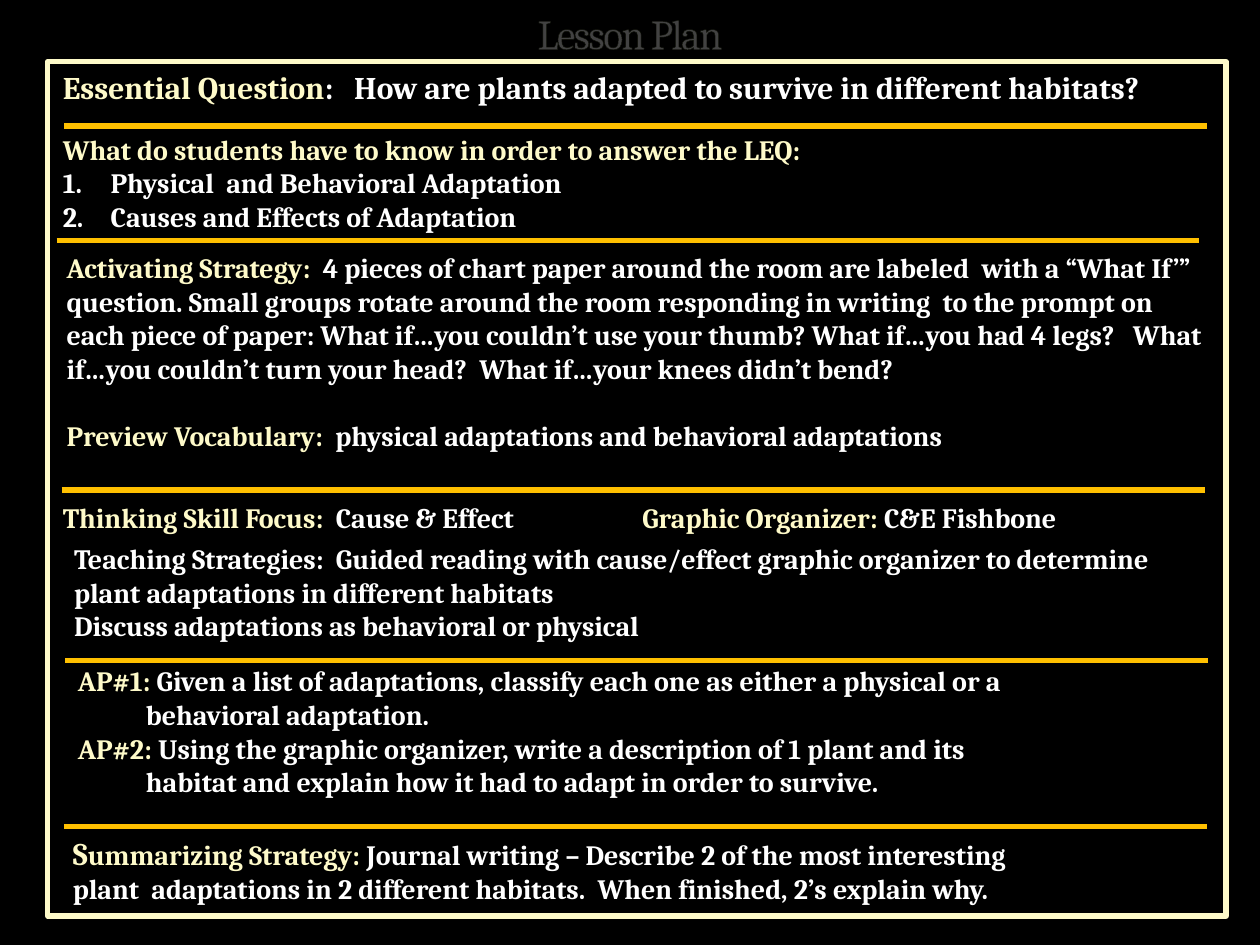
from lxml import etree
from pptx import Presentation
from pptx.dml.color import RGBColor
from pptx.enum.shapes import MSO_CONNECTOR, MSO_SHAPE
from pptx.enum.text import MSO_ANCHOR, MSO_AUTO_SIZE, PP_ALIGN
from pptx.oxml.ns import qn
from pptx.util import Inches, Pt

RECTANGLE = MSO_SHAPE.RECTANGLE
STRAIGHT = MSO_CONNECTOR.STRAIGHT
BOTTOM = MSO_ANCHOR.BOTTOM
CENTER = PP_ALIGN.CENTER
NO_AUTOFIT = MSO_AUTO_SIZE.NONE
GROW = MSO_AUTO_SIZE.SHAPE_TO_FIT_TEXT

COLORS = {
    "background": "000000",
    "label": "FEFAC9",
    "text": "FFFFFF",
    "rule": "FFC000",
    "outline": "3C4422",
}
FONT = "Cambria"
RULE_WIDTH = 9.07
HANGING = 0.38
AP_INDENT = 0.54


def color(name):
    return RGBColor.from_string(COLORS[name])


class LessonSlide:
    def __init__(self, slide):
        self.slide = slide
        fill = slide.background.fill
        fill.solid()
        fill.fore_color.rgb = color("background")

    def style(self, run, color_name, size, bold=True):
        run.font.name = FONT
        run.font.size = Pt(size)
        run.font.bold = bold
        run.font.color.rgb = color(color_name)

    def title(self, text, left, top, width, height):
        title = self.slide.shapes.title
        title.left, title.top = Inches(left), Inches(top)
        title.width, title.height = Inches(width), Inches(height)
        frame = title.text_frame
        frame.text = text
        frame.auto_size = NO_AUTOFIT
        frame.vertical_anchor = BOTTOM
        frame.paragraphs[0].alignment = CENTER
        run = frame.paragraphs[0].runs[0]
        self.style(run, "text", 24, bold=False)
        properties = run.font._element
        properties.set("spc", "-100")
        outline = etree.Element(qn("a:ln"), w=str(Pt(0.25)))
        fill = etree.SubElement(outline, qn("a:solidFill"))
        tint = etree.SubElement(fill, qn("a:srgbClr"), val=COLORS["outline"])
        etree.SubElement(tint, qn("a:alpha"), val="25000")
        properties.insert(0, outline)

    def frame(self, left, top, width, height):
        border = self.slide.shapes.add_shape(
            RECTANGLE, Inches(left), Inches(top), Inches(width), Inches(height))
        border.shadow.inherit = False
        border.fill.background()
        border.line.color.rgb = color("label")
        border.line.width = Pt(3)

    def rule(self, left, top):
        line = self.slide.shapes.add_connector(
            STRAIGHT, Inches(left), Inches(top),
            Inches(left + RULE_WIDTH), Inches(top))
        line.line.color.rgb = color("rule")
        line.line.width = Pt(3)
        etree.SubElement(line._element.spPr, qn("a:effectLst"))

    def section(self, left, top, width, height, paragraphs, size=16):
        """Add a text box; each paragraph is a list of (text, color[, size])."""
        box = self.slide.shapes.add_textbox(
            Inches(left), Inches(top), Inches(width), Inches(height))
        frame = box.text_frame
        frame.word_wrap = True
        frame.auto_size = GROW
        for index, parts in enumerate(paragraphs):
            paragraph = frame.paragraphs[0] if index == 0 else frame.add_paragraph()
            for text, color_name, *own_size in parts:
                run = paragraph.add_run()
                run.text = text
                self.style(run, color_name, own_size[0] if own_size else size)
        return frame.paragraphs

    def indent(self, paragraph, left, first=0):
        properties = paragraph._p.get_or_add_pPr()
        properties.set("marL", str(Inches(left)))
        properties.set("indent", str(Inches(first)))
        return properties

    def number(self, paragraph):
        properties = self.indent(paragraph, HANGING, -HANGING)
        etree.SubElement(properties, qn("a:buFontTx"))
        etree.SubElement(properties, qn("a:buAutoNum"), type="arabicPeriod")

    def tab_stop(self, paragraph, position):
        tabs = etree.SubElement(paragraph._p.get_or_add_pPr(), qn("a:tabLst"))
        etree.SubElement(tabs, qn("a:tab"), pos=str(Inches(position)), algn="l")


def main():
    presentation = Presentation()
    presentation.slide_width = Inches(10)
    presentation.slide_height = Inches(7.5)
    title_only = presentation.slide_layouts[5]
    lesson = LessonSlide(presentation.slides.add_slide(title_only))

    lesson.title("Lesson Plan", 0, 0, 10, 0.51)
    lesson.frame(0.38, 0.49, 9.35, 6.78)

    knowledge = lesson.section(0.4, 1, 9.35, 1.24, [
        [("What do students have to know in order to answer the LEQ:", "label")],
        [("Physical  and Behavioral Adaptation", "text")],
        [("Causes and Effects of Adaptation", "text")],
    ])
    for item in knowledge[1:]:
        lesson.number(item)

    skill = lesson.section(0.4, 3.92, 9.25, 0.37, [
        [("Thinking Skill Focus:  ", "label"), ("Cause & Effect\t", "text"),
         ("Graphic Organizer:", "label"), (" C&E Fishbone", "text")],
    ])
    lesson.tab_stop(skill[0], 4.6)

    assessments = lesson.section(0.52, 5.22, 9.48, 1.18, [
        [("AP#1:", "label"),
         (" Given a list of adaptations, classify each one as either a physical or a", "text")],
        [("behavioral adaptation.", "text")],
        [("AP#2:", "label"),
         (" Using the graphic organizer, write a description of 1 plant and its", "text")],
        [("habitat and explain how it had to adapt in order to survive.", "text")],
    ])
    for continuation in assessments[1::2]:
        lesson.indent(continuation, AP_INDENT)

    lesson.section(0.4, 0.49, 9.6, 0.4, [
        [("Essential Question", "label"),
         (":   How are plants adapted to survive in different habitats?", "text")],
    ], size=18)

    for left, top in [(0.51, 1), (0.45, 1.91), (0.49, 3.89), (0.52, 5.24), (0.51, 6.56)]:
        lesson.rule(left, top)

    lesson.section(0.48, 6.57, 9.29, 0.67, [
        [("S", "label", 18), ("ummarizing Strategy:", "label"),
         (" Journal writing – Describe 2 of the most interesting", "text")],
        [("plant  adaptations in 2 different habitats.  When finished, 2’s explain why.", "text")],
    ])

    lesson.section(0.49, 4.25, 9.14, 0.91, [
        [("Teaching Strategies:  Guided reading with cause/effect graphic organizer "
          "to determine plant adaptations in different habitats", "text")],
        [("Discuss adaptations as behavioral or physical", "text")],
    ])

    activation = lesson.section(0.43, 1.94, 9.27, 1.99, [
        [("Activating Strategy:  ", "label"),
         ("4 pieces of chart paper around the room are labeled  with a “What If’” "
          "question. Small groups rotate around the room responding in writing  to the "
          "prompt on each piece of paper: What if…you couldn’t use your thumb? "
          "What if…you had 4 legs?   What if…you couldn’t turn your head?  "
          "What if…your knees didn’t bend?", "text")],
        [("Preview Vocabulary:", "label"),
         ("  physical adaptations and behavioral adaptations", "text")],
    ])
    activation[1].space_before = Pt(19)

    presentation.save("out.pptx")


if __name__ == "__main__":
    main()
